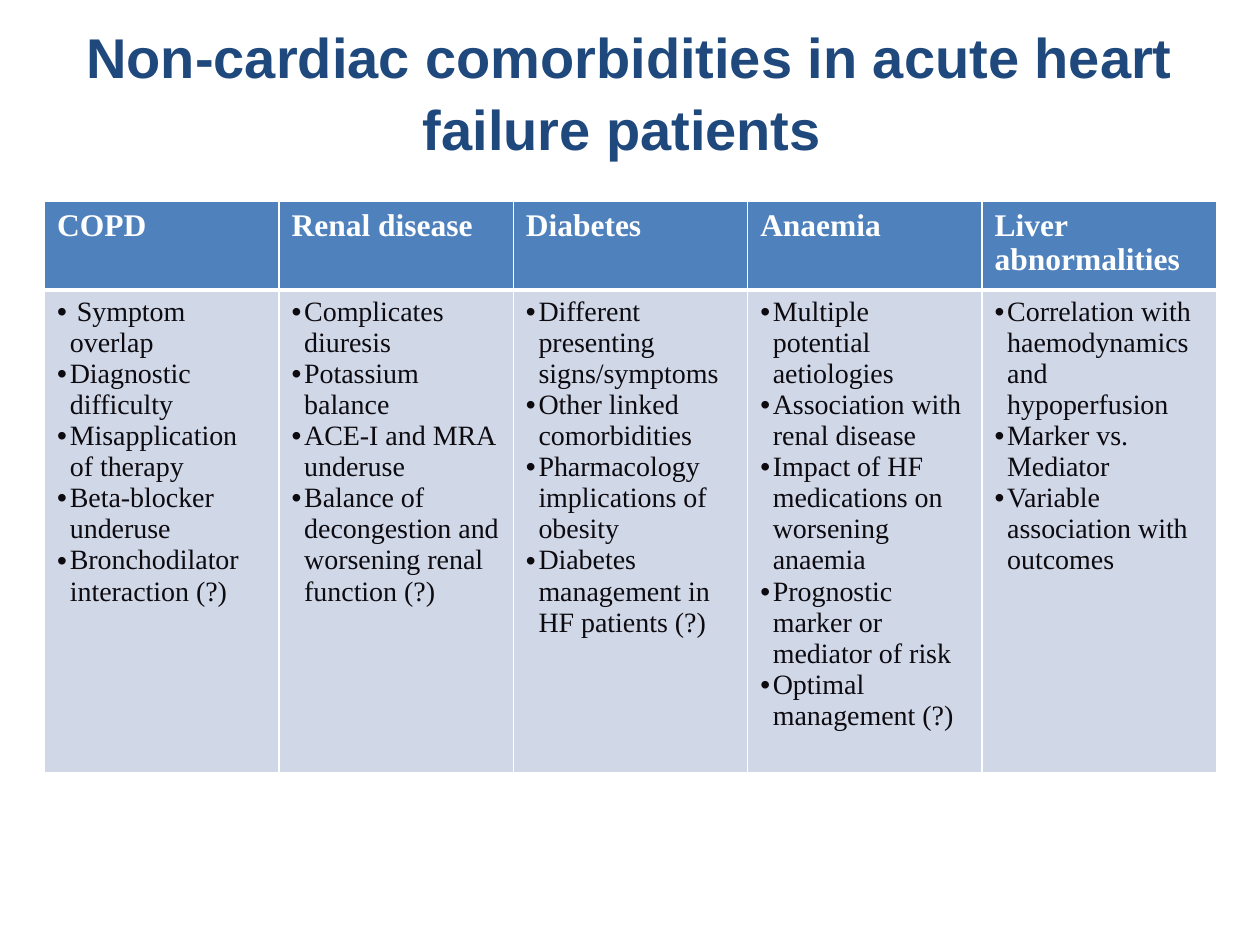
from dataclasses import dataclass

from lxml import etree
from pptx import Presentation
from pptx.dml.color import RGBColor
from pptx.enum.text import MSO_ANCHOR, PP_ALIGN
from pptx.oxml.ns import qn
from pptx.util import Pt

CENTER = PP_ALIGN.CENTER
MIDDLE = MSO_ANCHOR.MIDDLE

TITLE = "Non-cardiac comorbidities in acute heart failure patients "
TITLE_FONT = {"name": "Arial", "size": Pt(32), "bold": True}
HEAD_FONT = {"name": "Times New Roman", "size": Pt(18), "bold": True}
BODY_FONT = {"name": "Times New Roman", "size": Pt(16), "bold": False}
NAVY, WHITE, INK = "1F497D", "FFFFFF", "0D0A10"
HEAD_FILL, BODY_FILL = "4F81BD", "D0D8E8"
COL_WIDTH, HEAD_HEIGHT, BODY_HEIGHT = 133.92, 47, 255
INDENT = 7.2


@dataclass
class Comorbidity:
    name: str
    points: list[str]


COMORBIDITIES = [
    Comorbidity("COPD", [
        " Symptom overlap",
        "Diagnostic difficulty",
        "Misapplication of therapy",
        "Beta-blocker underuse",
        "Bronchodilator interaction (?)",
    ]),
    Comorbidity("Renal disease", [
        "Complicates diuresis",
        "Potassium balance",
        "ACE-I and MRA underuse",
        "Balance of decongestion and worsening renal function (?)",
    ]),
    Comorbidity("Diabetes", [
        "Different presenting signs/symptoms",
        "Other linked comorbidities",
        "Pharmacology implications of obesity",
        "Diabetes management in HF patients (?)",
    ]),
    Comorbidity("Anaemia", [
        "Multiple potential aetiologies",
        "Association with renal disease",
        "Impact of HF medications on worsening anaemia",
        "Prognostic marker or mediator of risk",
        "Optimal management (?)",
    ]),
    Comorbidity("Liver abnormalities", [
        "Correlation with haemodynamics and hypoperfusion",
        "Marker vs. Mediator",
        "Variable association with outcomes",
    ]),
]


def rgb(color: str) -> RGBColor:
    return RGBColor.from_string(color)


def add_run(p, text: str, font: dict, color: str) -> None:
    r = p.add_run()
    r.text = text
    for name, value in font.items():
        setattr(r.font, name, value)
    r.font.color.rgb = rgb(color)


def add_bullet(p) -> None:
    pPr = p._p.get_or_add_pPr()
    pPr.set("marL", str(Pt(INDENT)))
    pPr.set("indent", str(-Pt(INDENT)))
    etree.SubElement(pPr, qn("a:buFont"), typeface="Arial")
    etree.SubElement(pPr, qn("a:buChar"), char="•")


def set_borders(cell, widths: dict[str, float]) -> None:
    """Draw white borders, placed before the cell fill as the schema asks."""
    tcPr = cell._tc.get_or_add_tcPr()
    for i, (side, width) in enumerate(widths.items()):
        ln = etree.Element(qn(f"a:ln{side}"), w=str(Pt(width)))
        fill = etree.SubElement(ln, qn("a:solidFill"))
        etree.SubElement(fill, qn("a:srgbClr"), val=WHITE)
        tcPr.insert(i, ln)


def fill_cell(cell, lines: list[str], font: dict, color: str, fill: str,
              top: float, bottom: float, bullets: bool) -> None:
    cell.fill.solid()
    cell.fill.fore_color.rgb = rgb(fill)
    set_borders(cell, {"L": 1, "R": 1, "T": top, "B": bottom})
    tf = cell.text_frame
    for i, line in enumerate(lines):
        p = tf.add_paragraph() if i else tf.paragraphs[0]
        if bullets:
            add_bullet(p)
        add_run(p, line, font, color)


def add_title(s) -> None:
    tf = s.shapes.add_textbox(Pt(0), Pt(6.5), Pt(720), Pt(90)).text_frame
    tf.word_wrap = True
    tf.vertical_anchor = MIDDLE
    p = tf.paragraphs[0]
    p.alignment = CENTER
    p.line_spacing = 1.06
    add_run(p, TITLE, TITLE_FONT, NAVY)


def add_comorbidity_table(s) -> None:
    count = len(COMORBIDITIES)
    table = s.shapes.add_table(2, count, Pt(25.5), Pt(115.2), Pt(COL_WIDTH * count),
                               Pt(HEAD_HEIGHT + BODY_HEIGHT)).table
    table.rows[0].height = Pt(HEAD_HEIGHT)
    table.rows[1].height = Pt(BODY_HEIGHT)
    for col, item in enumerate(COMORBIDITIES):
        table.columns[col].width = Pt(COL_WIDTH)
        fill_cell(table.cell(0, col), [item.name], HEAD_FONT, WHITE, HEAD_FILL,
                  top=1, bottom=3, bullets=False)
        fill_cell(table.cell(1, col), item.points, BODY_FONT, INK, BODY_FILL,
                  top=3, bottom=1, bullets=True)


def main() -> None:
    prs = Presentation()
    prs.slide_width, prs.slide_height = Pt(720), Pt(540)
    s = prs.slides.add_slide(prs.slide_layouts[6])
    add_title(s)
    add_comorbidity_table(s)
    prs.save("out.pptx")


if __name__ == "__main__":
    main()
